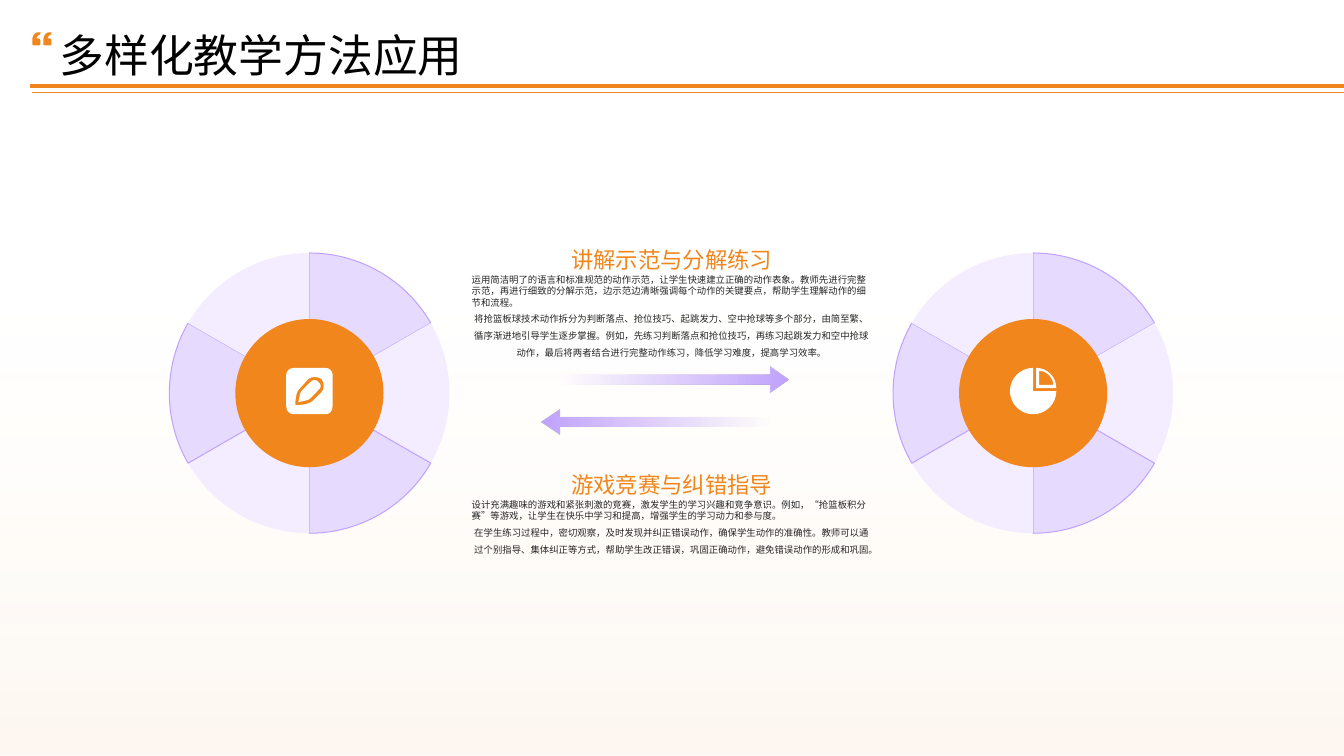
from math import cos, radians, sin, tan

from lxml import etree
from pptx import Presentation
from pptx.dml.color import RGBColor
from pptx.enum.lang import MSO_LANGUAGE_ID
from pptx.enum.shapes import MSO_CONNECTOR, MSO_SHAPE
from pptx.enum.text import MSO_ANCHOR, PP_ALIGN
from pptx.oxml.ns import qn
from pptx.util import Inches, Pt

RECT, OVAL, ARROW = MSO_SHAPE.RECTANGLE, MSO_SHAPE.OVAL, MSO_SHAPE.RIGHT_ARROW
STRAIGHT = MSO_CONNECTOR.STRAIGHT
LEFT, CENTER = PP_ALIGN.LEFT, PP_ALIGN.CENTER
TOP, MIDDLE, BOTTOM = MSO_ANCHOR.TOP, MSO_ANCHOR.MIDDLE, MSO_ANCHOR.BOTTOM
CHINESE = MSO_LANGUAGE_ID.SIMPLIFIED_CHINESE
FONT = "Noto Sans CJK SC"

ORANGE = RGBColor(0xF0, 0x86, 0x1C)
PURPLE = RGBColor(0xC1, 0xA3, 0xFE)
LILAC = RGBColor(0xE6, 0xDA, 0xFF)
PALE = RGBColor(0xF3, 0xED, 0xFF)
CREAM = RGBColor(0xFC, 0xE7, 0xD2)
PEACH = RGBColor(0xF9, 0xCF, 0xA4)
WHITE = RGBColor(0xFF, 0xFF, 0xFF)
BLACK = RGBColor(0, 0, 0)
DARK = RGBColor(0x26, 0x26, 0x26)

TITLE = "多样化教学方法应用"
SECTIONS = [
    (2.17, "讲解示范与分解练习",
     "运用简洁明了的语言和标准规范的动作示范，让学生快速建立正确的动作表象。教师先进行完整示范，再进行细致的分解示范，边示范边清晰强调每个动作的关键要点，帮助学生理解动作的细节和流程。",
     "将抢篮板球技术动作拆分为判断落点、抢位技巧、起跳发力、空中抢球等多个部分，由简至繁、循序渐进地引导学生逐步掌握。例如，先练习判断落点和抢位技巧，再练习起跳发力和空中抢球动作，最后将两者结合进行完整动作练习，降低学习难度，提高学习效率。"),
    (4.4, "游戏竞赛与纠错指导",
     "设计充满趣味的游戏和紧张刺激的竞赛，激发学生的学习兴趣和竞争意识。例如，“抢篮板积分赛”等游戏，让学生在快乐中学习和提高，增强学生的学习动力和参与度。",
     "在学生练习过程中，密切观察，及时发现并纠正错误动作，确保学生动作的准确性。教师可以通过个别指导、集体纠正等方式，帮助学生改正错误，巩固正确动作，避免错误动作的形成和巩固。"),
]
WHEELS = [3.07, 10.25]
WHEEL_Y, WHEEL_R, HUB = 3.9, 1.39, 1.47
ARROWS = [(3.64, False), (4.06, True)]
RULES = [(0.85, 3), (0.92, 0.75)]

PENCIL = [
    [(3.12, 3.77), (3.14, 3.77, 3.15, 3.78, 3.16, 3.79), (3.19, 3.81, 3.19, 3.85, 3.16, 3.87),
     (3.07, 3.96), (3.06, 3.97, 3.01, 3.98, 2.96, 3.99), (2.97, 3.94, 2.98, 3.89, 2.99, 3.88),
     (3.08, 3.79), (3.09, 3.78, 3.11, 3.77, 3.12, 3.77)],
    [(3.12, 3.74), (3.1, 3.74, 3.08, 3.75, 3.06, 3.76), (2.97, 3.86),
     (2.93, 3.89, 2.93, 4.02, 2.93, 4.02), (2.93, 4.02, 3.06, 4.02, 3.1, 3.98), (3.19, 3.89),
     (3.22, 3.86, 3.22, 3.8, 3.19, 3.76), (3.17, 3.75, 3.15, 3.74, 3.12, 3.74)],
    [(2.92, 3.65), (3.23, 3.65), (3.27, 3.65, 3.3, 3.68, 3.3, 3.72), (3.3, 4.03),
     (3.3, 4.08, 3.27, 4.11, 3.23, 4.11), (2.92, 4.11), (2.87, 4.11, 2.84, 4.08, 2.84, 4.03),
     (2.84, 3.72), (2.84, 3.68, 2.87, 3.65, 2.92, 3.65)],
]
QUOTE = [(0.38, 0.45), (0.34, 0.45), (0.33, 0.45, 0.32, 0.45, 0.32, 0.44), (0.32, 0.39),
         (0.32, 0.37, 0.33, 0.35, 0.34, 0.34), (0.35, 0.32, 0.37, 0.32, 0.4, 0.32), (0.4, 0.34),
         (0.38, 0.34, 0.37, 0.36, 0.36, 0.38), (0.38, 0.38), (0.39, 0.38, 0.4, 0.39, 0.4, 0.4),
         (0.4, 0.44), (0.4, 0.45, 0.39, 0.45, 0.38, 0.45)]
QUOTE_GAP = 0.11


def shift(contour, dx):
    return [tuple(v if i % 2 else v + dx for i, v in enumerate(step)) for step in contour]


def sector(cx, cy, r, start, sweep, curves=1):
    turn = radians(sweep / curves)
    k = 4 / 3 * tan(turn / 4)
    a = radians(start)
    first = (cx + r * cos(a), cy + r * sin(a))
    steps = [first]
    for _ in range(curves):
        b = a + turn
        steps.append((cx + r * (cos(a) - k * sin(a)), cy + r * (sin(a) + k * cos(a)),
                      cx + r * (cos(b) + k * sin(b)), cy + r * (sin(b) - k * cos(b)),
                      cx + r * cos(b), cy + r * sin(b)))
        a = b
    return steps + [(cx, cy), first]


def paint(sp, fill, line=None):
    sp.shadow.inherit = False
    if fill is not None:
        sp.fill.solid()
        sp.fill.fore_color.rgb = fill
    if line is None:
        sp.line.fill.background()
    else:
        sp.line.color.rgb = line
        sp.line.width = Pt(0.75)
    return sp


def add_outline(shapes, contours, fill, line=None):
    builder = None
    for contour in contours:
        emu = [(Inches(step[i]), Inches(step[i + 1]))
               for step in contour for i in range(0, len(step), 2)]
        if builder is None:
            builder = shapes.build_freeform(*emu[0], scale=1.0)
        else:
            builder.move_to(*emu[0])
        builder.add_line_segments(emu[1:], close=False)
    sp = builder.convert_to_shape()
    outline = next(sp._element.iter(qn("a:path")))
    nodes = iter(outline.findall(qn("a:lnTo")))
    for contour in contours:
        for step in contour[1:]:
            node = next(nodes)
            if len(step) == 6:
                curve = etree.Element(qn("a:cubicBezTo"))
                node.addprevious(curve)
                for part in (node, next(nodes), next(nodes)):
                    curve.append(part[0])
                    outline.remove(part)
                node = curve
        node.addnext(etree.Element(qn("a:close")))
    return paint(sp, fill, line)


def add_preset(kind, x, y, w, h, fill=None):
    return paint(s.shapes.add_shape(kind, Inches(x), Inches(y), Inches(w), Inches(h)), fill)


def set_gradient(sp, stops, angle):
    sp.fill.gradient()
    grad = sp._element.spPr.find(qn("a:gradFill"))
    for child in list(grad):
        grad.remove(child)
    stop_list = etree.SubElement(grad, qn("a:gsLst"))
    for position, color, alpha in stops:
        stop = etree.SubElement(stop_list, qn("a:gs"), pos=str(position * 1000))
        clr = etree.SubElement(stop, qn("a:srgbClr"), val=str(color))
        etree.SubElement(clr, qn("a:alpha"), val=str(alpha * 1000))
    etree.SubElement(grad, qn("a:lin"), ang=str(angle * 60000), scaled="0")


def add_text(paragraphs, x, y, w, h, size, color, anchor=TOP):
    tf = s.shapes.add_textbox(Inches(x), Inches(y), Inches(w), Inches(h)).text_frame
    tf.word_wrap = True
    tf.vertical_anchor = anchor
    tf.margin_left = tf.margin_right = tf.margin_top = tf.margin_bottom = 0
    for i, (text, align, spacing) in enumerate(paragraphs):
        p = tf.add_paragraph() if i else tf.paragraphs[0]
        p.alignment = align
        p.line_spacing = spacing
        r = p.add_run()
        r.text = text
        r.font.size = Pt(size)
        r.font.name = FONT
        r.font.color.rgb = color
        r.font.language_id = CHINESE
        etree.SubElement(r._r.get_or_add_rPr(), qn("a:ea"), typeface=FONT)


prs = Presentation()
prs.slide_width, prs.slide_height = Inches(40 / 3), Inches(7.5)
s = prs.slides.add_slide(prs.slide_layouts[6])

backdrop = add_preset(RECT, -0.04, 0, 13.42, 7.5)
set_gradient(backdrop, [(41, CREAM, 0), (97, PEACH, 15)], 90)

pie_x = WHEELS[1]
pie = [sector(pie_x + 0.06, 3.82, 0.14, -90, 90),
       sector(pie_x + 0.03, 3.85, 0.2, -90, 90),
       sector(pie_x, 3.88, 0.23, 0, 270, curves=3)]

for cx, icon in zip(WHEELS, [PENCIL, pie]):
    group = s.shapes.add_group_shape()
    for i in range(6):
        fill, line = (PALE, None) if i % 2 else (LILAC, PURPLE)
        add_outline(group.shapes, [sector(cx, WHEEL_Y, WHEEL_R, -90 + 60 * i, 60)], fill, line)
    add_preset(OVAL, cx - HUB / 2, WHEEL_Y - HUB / 2, HUB, HUB, ORANGE)
    add_outline(s.shapes, icon, WHITE)

for y, flipped in ARROWS:
    arrow = add_preset(ARROW, 5.37, y, 2.45, 0.25)
    arrow.adjustments[0], arrow.adjustments[1] = 0.39, 0.75
    set_gradient(arrow, [(8, PURPLE, 0), (100, PURPLE, 100)], 0)
    if flipped:
        arrow._element.spPr.find(qn("a:xfrm")).set("flipH", "1")

for y, heading, intro, detail in SECTIONS:
    add_text([(heading, CENTER, 1.5)], 4.68, y, 3.97, 0.54, 16, ORANGE, BOTTOM)
    add_text([(intro, LEFT, 1.0), (detail, CENTER, 1.5)], 4.68, y + 0.55, 3.97, 0.82, 6.7, DARK)

add_text([(TITLE, LEFT, 1.2)], 0.59, 0.25, 12.17, 0.47, 32, BLACK, MIDDLE)
add_outline(s.shapes, [shift(QUOTE, dx) for dx in (0, QUOTE_GAP)], ORANGE)

for y, width in RULES:
    rule = s.shapes.add_connector(STRAIGHT, Inches(0.32), Inches(y), Inches(13.33), Inches(y))
    rule.line.color.rgb = ORANGE
    rule.line.width = Pt(width)
    rule.line._get_or_add_ln().set("cap", "sq")
    etree.SubElement(rule._element.spPr, qn("a:effectLst"))

prs.save("out.pptx")
